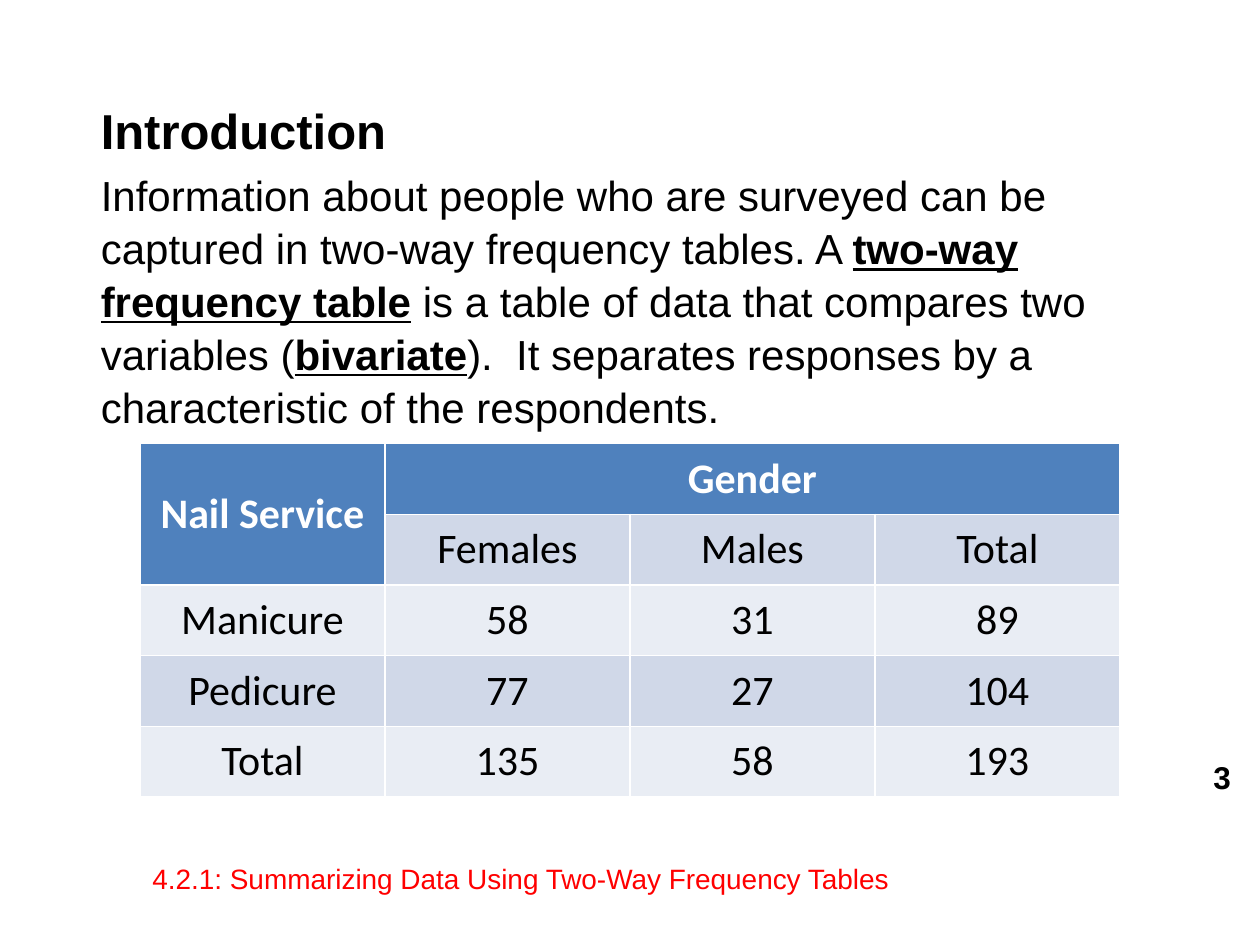
from pptx import Presentation
from pptx.dml.color import RGBColor
from pptx.enum.text import MSO_ANCHOR as Anchor, PP_ALIGN as Align
from pptx.util import Pt

BLACK = RGBColor(0, 0, 0)
WHITE = RGBColor(0xFF, 0xFF, 0xFF)
RED = RGBColor(0xFF, 0, 0)
HEADER = RGBColor(0x4F, 0x81, 0xBD)
BANDS = [RGBColor(0xE9, 0xED, 0xF4), RGBColor(0xD0, 0xD8, 0xE8)]

HEADING = "Introduction"
BODY = [
    ("Information about people who are surveyed can be captured in "
     "two-way frequency tables. A ", False),
    ("two-way frequency table", True),
    (" is a table of data that compares two variables (", False),
    ("bivariate", True),
    (").  It separates responses by a characteristic of the respondents.", False),
]
ROWS = [
    ["Nail Service", "Gender", "", ""],
    ["", "Females", "Males", "Total"],
    ["Manicure", "58", "31", "89"],
    ["Pedicure", "77", "27", "104"],
    ["Total", "135", "58", "193"],
]
MERGES = [((0, 0), (1, 0)), ((0, 1), (0, 3))]
LABELS = [
    ("3", (653, 432.5, 57.5, 22.5), 18, True, BLACK, Align.RIGHT),
    ("4.2.1: Summarizing Data Using Two-Way Frequency Tables",
     (80, 491.5, 438.5, 21), 16, False, RED, Align.LEFT),
]
TABLE_LEFT, TABLE_TOP = 80, 253.5
COL_WIDTH, ROW_HEIGHT = 140, 40.4


def set_font(p, name, size, bold, color, align):
    p.alignment = align
    p.font.name = name
    p.font.size = Pt(size)
    p.font.bold = bold
    p.font.color.rgb = color


def add_intro(s):
    title = s.shapes.title
    title._element.getparent().remove(title._element)
    sp = s.placeholders[1]
    sp.left, sp.top, sp.width, sp.height = Pt(50.4), Pt(52), Pt(628), Pt(394)
    tf = sp.text_frame
    tf.vertical_anchor = Anchor.TOP
    heading = tf.paragraphs[0]
    heading.text = HEADING
    set_font(heading, "Arial", 28, True, BLACK, Align.LEFT)
    heading.space_before = Pt(0)
    p = tf.add_paragraph()
    set_font(p, "Arial", 24, False, BLACK, Align.LEFT)
    p.space_before = Pt(4.8)
    for text, is_term in BODY:
        r = p.add_run()
        r.text = text
        if is_term:
            r.font.bold = r.font.underline = True
    for p in tf.paragraphs:
        p.line_spacing = 1.05


def add_label(s, text, box, size, bold, color, align):
    tf = s.shapes.add_textbox(*map(Pt, box)).text_frame
    tf.word_wrap = True
    tf.vertical_anchor = Anchor.MIDDLE
    p = tf.paragraphs[0]
    p.text = text
    set_font(p, "Arial", size, bold, color, align)


def add_frequency_table(s):
    n_rows, n_cols = len(ROWS), len(ROWS[0])
    table = s.shapes.add_table(
        n_rows, n_cols, Pt(TABLE_LEFT), Pt(TABLE_TOP),
        Pt(COL_WIDTH * n_cols), Pt(ROW_HEIGHT * n_rows)).table
    for first, last in MERGES:
        table.cell(*first).merge(table.cell(*last))
    for i, row in enumerate(ROWS):
        for j, text in enumerate(row):
            cell = table.cell(i, j)
            is_header = i == 0 or (i, j) == (1, 0)
            cell.fill.solid()
            cell.fill.fore_color.rgb = HEADER if is_header else BANDS[i % 2]
            cell.vertical_anchor = Anchor.MIDDLE
            p = cell.text_frame.paragraphs[0]
            p.text = text
            set_font(p, "Calibri", 24, is_header,
                     WHITE if is_header else BLACK, Align.CENTER)


def main():
    prs = Presentation()
    prs.slide_width, prs.slide_height = Pt(720), Pt(540)
    s = prs.slides.add_slide(prs.slide_layouts[0])
    add_intro(s)
    for label in LABELS:
        add_label(s, *label)
    add_frequency_table(s)
    prs.save("out.pptx")


if __name__ == "__main__":
    main()
